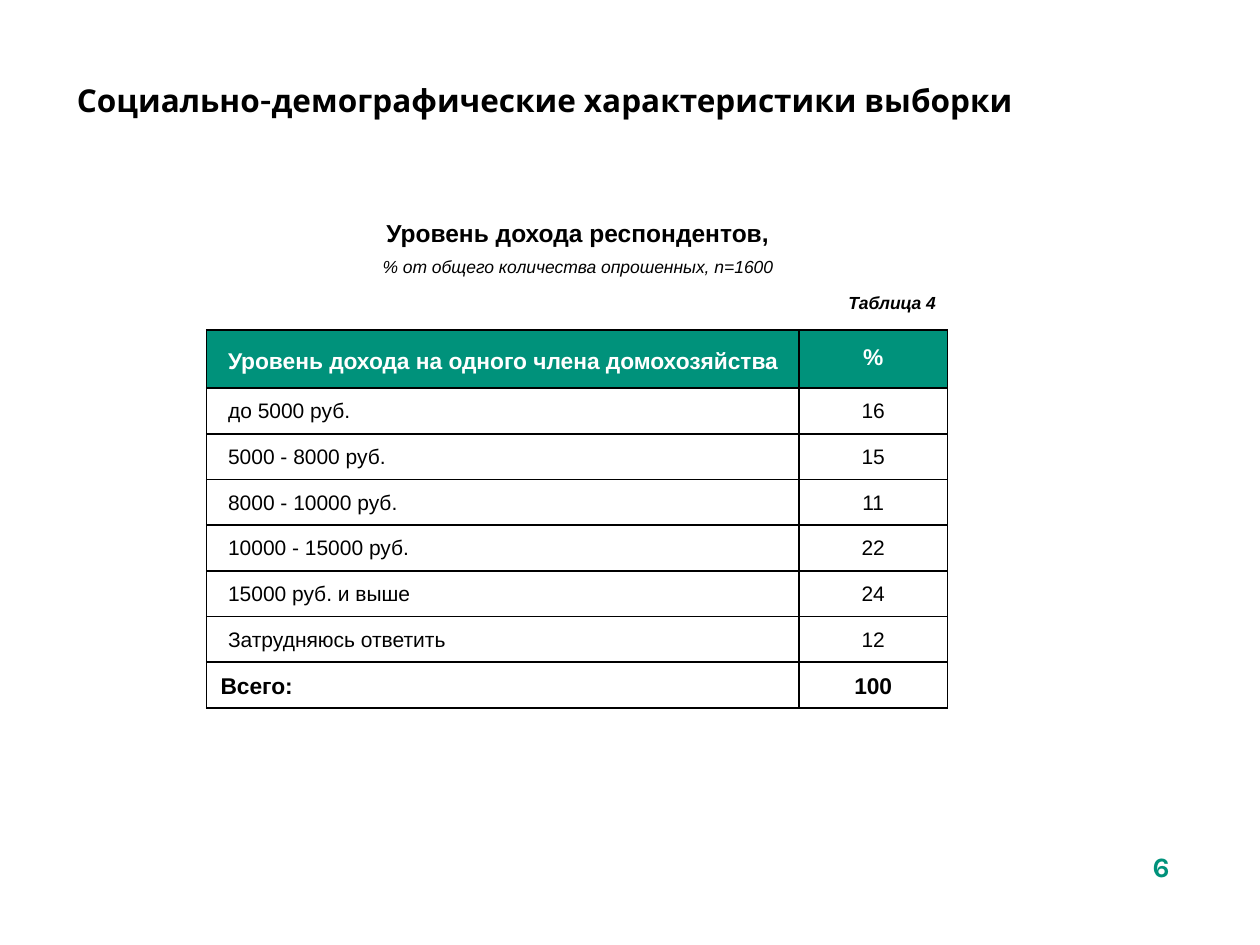
from lxml import etree
from pptx import Presentation
from pptx.dml.color import RGBColor
from pptx.enum.text import MSO_ANCHOR, PP_ALIGN
from pptx.oxml import parse_xml
from pptx.oxml.ns import nsdecls, qn
from pptx.util import Inches, Pt

GREEN = RGBColor(0x00, 0x92, 0x7B)
BLACK = RGBColor(0x00, 0x00, 0x00)
WHITE = RGBColor(0xFF, 0xFF, 0xFF)

HEADER = ("Уровень дохода на одного члена домохозяйства", "%")
INCOME_ROWS = [
    ("до 5000 руб.", "16"),
    ("5000 - 8000 руб.", "15"),
    ("8000 - 10000 руб.", "11"),
    ("10000 - 15000 руб.", "22"),
    ("15000 руб. и выше", "24"),
    ("Затрудняюсь ответить", "12"),
]
TOTAL = ("Всего:", "100")


def style_paragraph(paragraph, size, color=BLACK, name="Arial", bold=False,
                    italic=False, align=PP_ALIGN.CENTER):
    paragraph.alignment = align
    font = paragraph.font
    font.name, font.size = name, Pt(size)
    font.bold, font.italic = bold, italic
    font.color.rgb = color


def add_title(slide, box, text):
    title = slide.shapes.title
    title.left, title.top, title.width, title.height = box
    frame = title.text_frame
    frame.text = text
    frame.word_wrap = True
    frame.vertical_anchor = MSO_ANCHOR.MIDDLE
    style_paragraph(frame.paragraphs[0], 18, name="Karla", bold=True, align=PP_ALIGN.LEFT)


def add_text(slide, box, lines):
    """Add a text box; each line is a text and its paragraph style."""
    frame = slide.shapes.add_textbox(*box).text_frame
    frame.word_wrap = True
    for index, (text, style) in enumerate(lines):
        paragraph = frame.add_paragraph() if index else frame.paragraphs[0]
        paragraph.text = text
        if index:
            paragraph.space_before = Pt(style["size"] / 2)
        style_paragraph(paragraph, **style)


def add_borders(cell):
    properties = cell._tc.get_or_add_tcPr()
    for index, side in enumerate(("lnL", "lnR", "lnT", "lnB")):
        properties.insert(index, parse_xml(
            f'<a:{side} {nsdecls("a")} w="{Pt(1)}"><a:solidFill>'
            f'<a:srgbClr val="{BLACK}"/></a:solidFill></a:{side}>'))


def fill_cell(cell, text, size, margins, anchor=MSO_ANCHOR.MIDDLE, fill=None,
              line_spacing=None, indent=0, **style):
    cell.margin_left = cell.margin_right = Inches(margins[0])
    cell.margin_top, cell.margin_bottom = Inches(margins[1]), Inches(margins[2])
    cell.vertical_anchor = anchor
    if fill is None:
        cell.fill.background()
    else:
        cell.fill.solid()
        cell.fill.fore_color.rgb = fill
    add_borders(cell)
    paragraph = cell.text_frame.paragraphs[0]
    paragraph.text = text
    if line_spacing:
        paragraph.line_spacing = line_spacing
    if indent:
        paragraph._p.get_or_add_pPr().set("marL", str(Inches(indent)))
    style_paragraph(paragraph, size, **style)


def add_income_table(slide, box):
    rows = [HEADER, *INCOME_ROWS, TOTAL]
    table = slide.shapes.add_table(len(rows), 2, *box).table
    table.first_row = table.horz_banding = False
    table.columns[0].width = Inches(4.7)
    table.columns[1].width = box[2] - Inches(4.7)
    header_height = Inches(0.46)
    row_height = (box[3] - header_height) // (len(rows) - 1)
    for index, row in enumerate(table.rows):
        row.height = row_height if index else header_height

    wide, narrow = (0.11, 0.05, 0.05), (0.01, 0.01, 0)
    for column, (text, spacing) in enumerate(zip(HEADER, (1.2, 0.8))):
        fill_cell(table.cell(0, column), text, 13, wide, fill=GREEN,
                  line_spacing=spacing, color=WHITE, bold=True)
    for index, (label, value) in enumerate(INCOME_ROWS, start=1):
        fill_cell(table.cell(index, 0), label, 12, narrow, indent=0.16, align=PP_ALIGN.LEFT)
        fill_cell(table.cell(index, 1), value, 12, narrow)
    for column, (text, align) in enumerate(zip(TOTAL, (PP_ALIGN.LEFT, PP_ALIGN.CENTER))):
        fill_cell(table.cell(len(rows) - 1, column), text, 13, wide, MSO_ANCHOR.TOP,
                  line_spacing=1.2, bold=True, align=align)


def inches_box(*lengths):
    return [Inches(length) for length in lengths]


def main():
    presentation = Presentation()
    presentation.slide_width, presentation.slide_height = Inches(10), Inches(7.5)
    slide = presentation.slides.add_slide(presentation.slide_layouts[5])
    add_title(slide, inches_box(0.51, 0.44, 7.8, 0.71),
              "Социально-демографические характеристики выборки")
    add_text(slide, inches_box(0.31, 1.68, 8.55, 0.59), [
        ("Уровень дохода респондентов,", dict(size=14, bold=True)),
        ("% от общего количества опрошенных, n=1600", dict(size=10, italic=True)),
    ])
    add_text(slide, inches_box(6.27, 2.27, 1.62, 0.27),
             [("Таблица 4", dict(size=10, bold=True, italic=True))])
    add_income_table(slide, inches_box(1.64, 2.62, 5.88, 3))
    add_text(slide, inches_box(8.78, 6.69, 0.87, 0.52),
             [("6", dict(size=16, color=GREEN, name="Karla", bold=True))])
    presentation.save("out.pptx")


if __name__ == "__main__":
    main()
